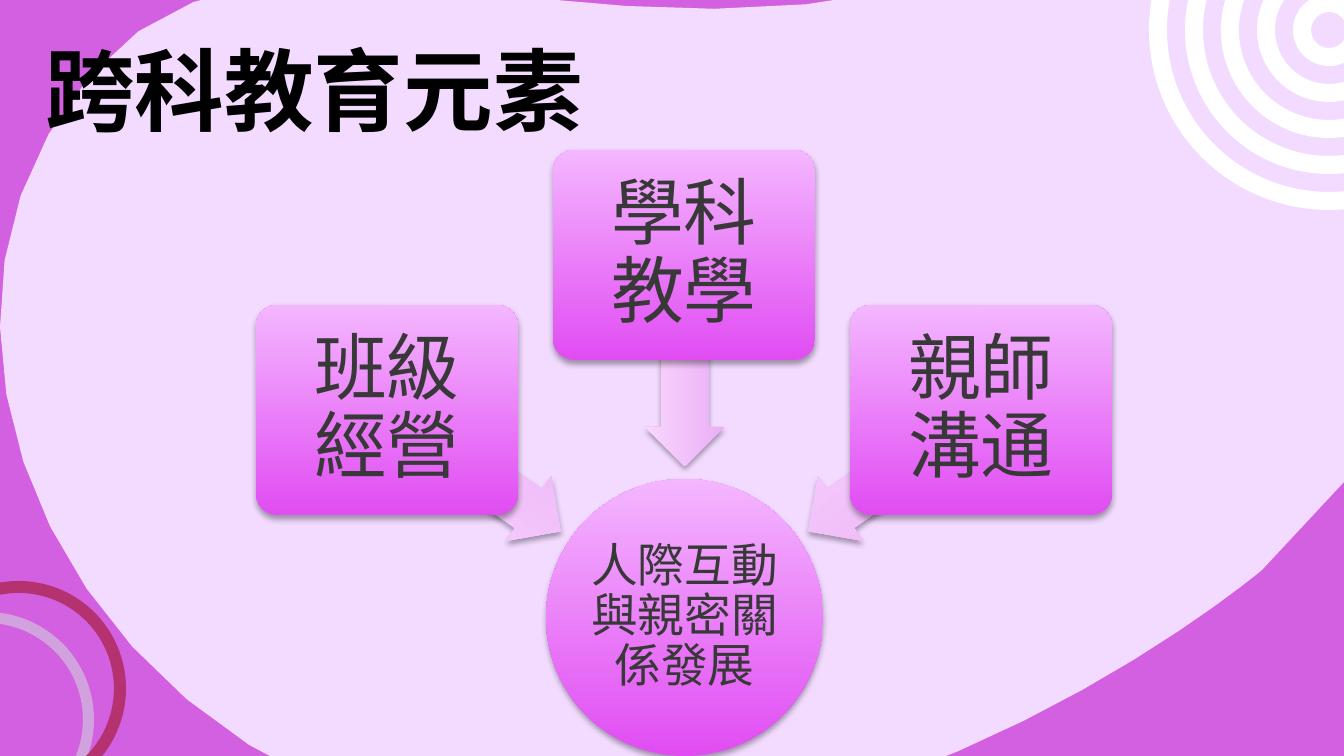
from dataclasses import dataclass

from lxml.etree import SubElement
from pptx import Presentation
from pptx.dml.color import RGBColor
from pptx.enum.shapes import MSO_SHAPE
from pptx.enum.text import MSO_ANCHOR, MSO_AUTO_SIZE, PP_ALIGN
from pptx.oxml.ns import qn
from pptx.util import Emu, Pt

FONT = "Noto Sans CJK SC"
EMU_PER_PX = 914400 / 134.4
NODE_GRADIENT = ("E14DF3", "F4B6FF")
ARROW_GRADIENT = ("EBAEF5", "F9D6FF")
Point = tuple[float, float]


@dataclass
class Card:
    text: str
    left: int
    top: int


@dataclass
class Arrow:
    left: int
    top: int
    rotation: int


@dataclass
class Ring:
    left: int
    top: int
    size: int
    thickness: int
    color: str


CARD_LEFT, CARD_STEP = 256, 297
BRANCHES = [
    (Arrow(368, 431, 215), Card("班級 經營", CARD_LEFT, 305)),
    (Arrow(579, 321, 270), Card("學科 教學", CARD_LEFT + CARD_STEP, 150)),
    (Arrow(789, 431, 325), Card("親師 溝通", CARD_LEFT + 2 * CARD_STEP, 305)),
]
TARGET_X, TARGET_Y, TARGET_STEP = 1329, 30, 18
RINGS = [
    Ring(-121, 612, 215, 11, "D2A2DF"),
    Ring(-89, 581, 215, 12, "B3326F"),
] + [
    Ring(TARGET_X - radius, TARGET_Y - radius, 2 * radius, TARGET_STEP, "FFFFFF")
    for radius in range(10 * TARGET_STEP, 0, -2 * TARGET_STEP)
]
BLOB_START = (1262, 570)
BLOB_CURVES = [
    ((1262, 570), (887, 886), (480, 829)),
    ((73, 771), (-129, 331), (89, 77)),
    ((306, -179), (710, 199), (1207, -146)),
    ((1414, -292), (1813, 34), BLOB_START),
]


def px(length: float) -> Emu:
    return Emu(round(length * EMU_PER_PX))


def rgb(color: str) -> RGBColor:
    return RGBColor.from_string(color)


def paint(shape, color: str) -> None:
    shape.shadow.inherit = False
    shape.line.fill.background()
    shape.fill.solid()
    shape.fill.fore_color.rgb = rgb(color)


def paint_raised(shape, gradient: tuple[str, str]) -> None:
    """Fill from bottom to top and add a soft shadow below."""
    shape.line.fill.background()
    shape.fill.gradient()
    shape.fill.gradient_angle = 90
    for stop, color in zip(shape.fill.gradient_stops, gradient):
        stop.color.rgb = rgb(color)
    shape.shadow.inherit = False
    effects = shape._element.spPr.find(qn("a:effectLst"))
    shadow = SubElement(effects, qn("a:outerShdw"), blurRad="40000", dist="23000",
                        dir="5400000", rotWithShape="0")
    shade = SubElement(shadow, qn("a:srgbClr"), val="000000")
    SubElement(shade, qn("a:alpha"), val="35000")


def add_preset(page, kind, left: int, top: int, width: int, height: int):
    return page.shapes.add_shape(kind, px(left), px(top), px(width), px(height))


def curve_points(start: Point, curves, steps: int = 14) -> list[Point]:
    """Sample a chain of cubic Bézier curves."""
    points = [start]
    for curve in curves:
        corners = (points[-1], *curve)
        for step in range(1, steps + 1):
            t = step / steps
            weights = ((1 - t) ** 3, 3 * t * (1 - t) ** 2, 3 * t * t * (1 - t), t ** 3)
            x, y = (sum(w * corner[axis] for w, corner in zip(weights, corners))
                    for axis in (0, 1))
            points.append((x, y))
    return points


def add_blob(page) -> None:
    start, *rest = [(px(x), px(y)) for x, y in curve_points(BLOB_START, BLOB_CURVES)]
    builder = page.shapes.build_freeform(*start)
    builder.add_line_segments(rest, close=True)
    paint(builder.convert_to_shape(), "F2DBFF")


def add_ring(page, ring: Ring) -> None:
    shape = add_preset(page, MSO_SHAPE.DONUT, ring.left, ring.top, ring.size, ring.size)
    shape.adjustments[0] = ring.thickness / ring.size
    paint(shape, ring.color)


def write(frame, text: str, size: int, color: str, bold: bool = False):
    para = frame.paragraphs[0]
    para.text = text
    font = para.font
    font.size, font.bold, font.name = Pt(size), bold, FONT
    font.color.rgb = rgb(color)
    defaults = para._p.pPr.find(qn("a:defRPr"))
    SubElement(defaults, qn("a:ea"), typeface=FONT)
    return para


def write_centred(shape, text: str, size: int, inset: int) -> None:
    frame = shape.text_frame
    frame.word_wrap = True
    frame.vertical_anchor = MSO_ANCHOR.MIDDLE
    frame.margin_left = frame.margin_right = px(inset)
    frame.margin_top = frame.margin_bottom = px(inset)
    para = write(frame, text, size, "383838")
    para.alignment = PP_ALIGN.CENTER
    para.line_spacing = 0.9


def add_arrow(page, arrow: Arrow) -> None:
    shape = add_preset(page, MSO_SHAPE.LEFT_ARROW, arrow.left, arrow.top, 212, 79)
    shape.adjustments[0], shape.adjustments[1] = 0.6, 0.5
    shape.rotation = arrow.rotation
    paint_raised(shape, ARROW_GRADIENT)


def add_card(page, card: Card) -> None:
    shape = add_preset(page, MSO_SHAPE.ROUNDED_RECTANGLE, card.left, card.top, 262, 210)
    shape.adjustments[0] = 0.1
    paint_raised(shape, NODE_GRADIENT)
    write_centred(shape, card.text, 39, 11)


def add_title(page, text: str) -> None:
    box = page.shapes.add_textbox(px(32), px(28), px(570), px(122))
    box.text_frame.word_wrap = False
    box.text_frame.auto_size = MSO_AUTO_SIZE.SHAPE_TO_FIT_TEXT
    write(box.text_frame, text, 48, "000000", bold=True)


def main() -> None:
    deck = Presentation()
    deck.slide_width, deck.slide_height = px(1344), px(756)
    page = deck.slides.add_slide(deck.slide_layouts[6])
    page.background.fill.solid()
    page.background.fill.fore_color.rgb = rgb("D260E0")
    add_blob(page)
    for ring in RINGS:
        add_ring(page, ring)
    hub = add_preset(page, MSO_SHAPE.OVAL, 546, 479, 277, 277)
    paint_raised(hub, NODE_GRADIENT)
    write_centred(hub, "人際互動與親密關係發展", 25, 3)
    for arrow, card in BRANCHES:
        add_arrow(page, arrow)
        add_card(page, card)
    add_title(page, "跨科教育元素")
    deck.save("out.pptx")


if __name__ == "__main__":
    main()
